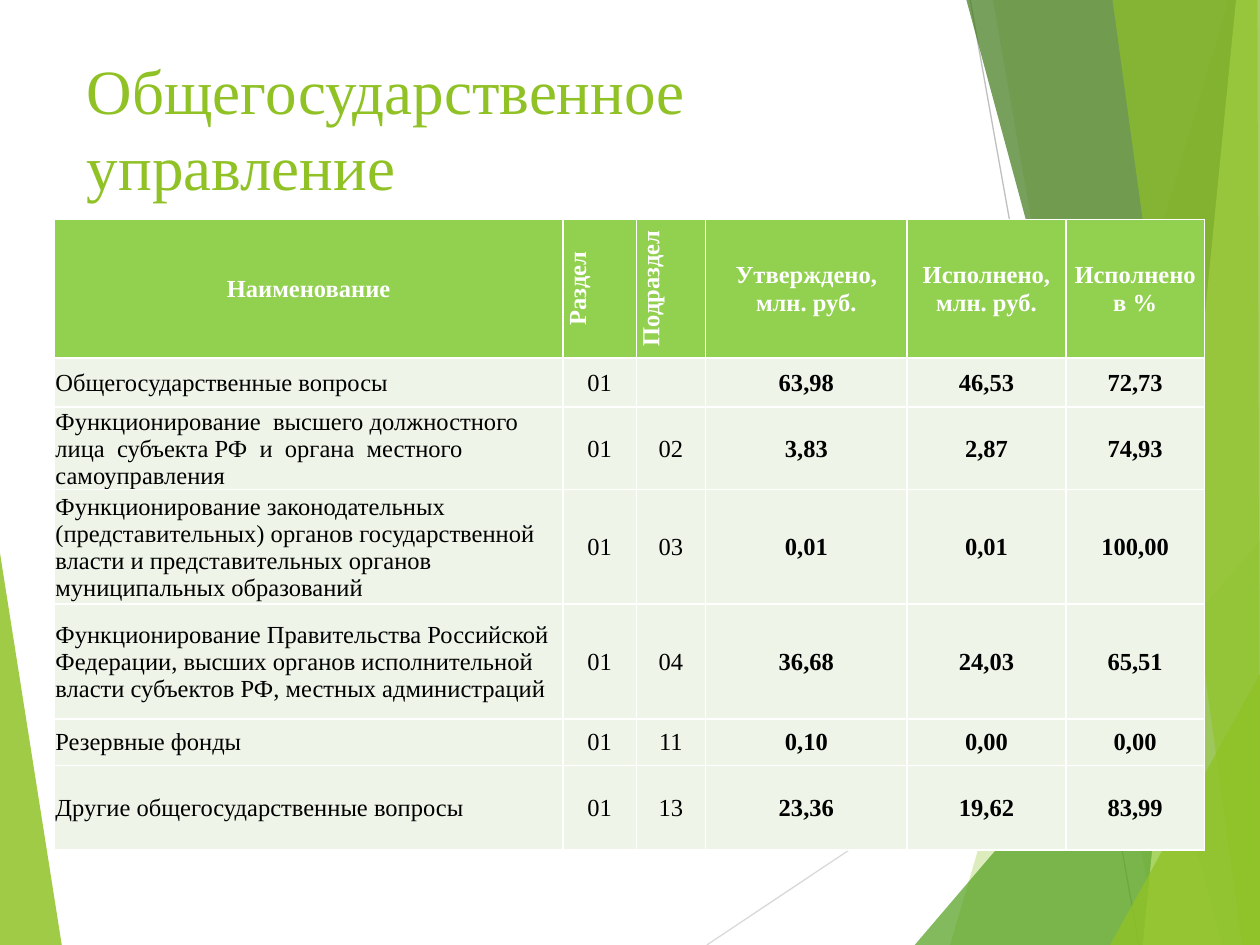
from lxml.etree import SubElement
from pptx import Presentation
from pptx.dml.color import RGBColor
from pptx.enum.shapes import MSO_CONNECTOR
from pptx.enum.text import MSO_ANCHOR, MSO_AUTO_SIZE, PP_ALIGN
from pptx.oxml.ns import qn
from pptx.util import Inches, Pt

FONT = "Times New Roman"
GREEN, HEADER_GREEN, PALE_GREEN = "90C226", "92D050", "EEF4E8"
WHITE, BLACK = "FFFFFF", "000000"

RAYS = [
    ("D9D9D9", (5.61, 7.5), (10, 4.57)),
    ("BFBFBF", (7.7, 0), (9.04, 7.5)),
]
FACETS = [
    (GREEN, 30, [(9.75, 0), (7.54, 7.5), (10, 7.5), (10, 0)]),
    (GREEN, 20, [(7.88, 0), (9.19, 7.5), (10, 7.5), (10, 0)]),
    ("54A021", 72, [(7.26, 7.5), (10, 4.29), (10, 7.5)]),
    ("3F7819", 70, [(7.67, 0), (9.7, 7.5), (10, 7.5), (10, 0)]),
    ("C0E474", 70, [(9.81, 0), (9.07, 7.5), (10, 7.5), (10, 0)]),
    (GREEN, 65, [(8.83, 0), (9.86, 7.5), (10, 7.5), (9.98, 0)]),
    (GREEN, 80, [(8.81, 7.5), (10, 5.35), (10, 7.5)]),
]
LEFT_FACET = (GREEN, 85, [(0, 4.39), (0.49, 7.5), (0, 7.5)])

COLUMN_WIDTHS = [4.04, 0.58, 0.55, 1.6, 1.26, 1.1]
ROW_HEIGHTS = [1.1, 0.39, 0.65, 0.91, 0.91, 0.37, 0.67]
HEADINGS = ["Наименование", "Раздел", "Подраздел", "Утверждено,\nмлн. руб.",
            "Исполнено,\nмлн. руб.", "Исполнено в %"]
BUDGET = [
    ("Общегосударственные вопросы", "01", "", "63,98", "46,53", "72,73"),
    ("Функционирование  высшего должностного  лица  субъекта РФ  и  органа  местного  "
     "самоуправления", "01", "02", "3,83", "2,87", "74,93"),
    ("Функционирование законодательных (представительных) органов государственной "
     "власти и представительных органов муниципальных образований",
     "01", "03", "0,01", "0,01", "100,00"),
    ("Функционирование Правительства Российской Федерации, высших органов "
     "исполнительной власти субъектов РФ, местных администраций",
     "01", "04", "36,68", "24,03", "65,51"),
    ("Резервные фонды", "01", "11", "0,10", "0,00", "0,00"),
    ("Другие общегосударственные вопросы", "01", "13", "23,36", "19,62", "83,99"),
]


def rgb(hex_color):
    return RGBColor.from_string(hex_color)


def write_text(frame, text, *, size, color, bold=False, align=PP_ALIGN.LEFT):
    frame.text = text
    for paragraph in frame.paragraphs:
        paragraph.alignment = align
        for run in paragraph.runs:
            run.font.name = FONT
            run.font.size = Pt(size)
            run.font.bold = bold
            run.font.color.rgb = rgb(color)


def add_facet(slide, color, opacity, corners):
    points = [(Inches(x), Inches(y)) for x, y in corners]
    builder = slide.shapes.build_freeform(*points[0])
    builder.add_line_segments(points[1:], close=True)
    facet = builder.convert_to_shape()
    facet.shadow.inherit = False
    facet.line.fill.background()
    facet.fill.solid()
    facet.fill.fore_color.rgb = rgb(color)
    fill_color = facet._element.spPr.find(qn("a:solidFill"))[0]
    SubElement(fill_color, qn("a:alpha"), val=str(opacity * 1000))


def add_ray(slide, color, start, end):
    ends = [Inches(value) for value in (*start, *end)]
    ray = slide.shapes.add_connector(MSO_CONNECTOR.STRAIGHT, *ends)
    ray.line.color.rgb = rgb(color)
    ray.line.width = Pt(0.75)
    SubElement(ray._element.spPr, qn("a:effectLst"))


def add_title(slide, text):
    title = slide.shapes.title
    title.left, title.top = Inches(0.59), Inches(0.29)
    title.width, title.height = Inches(6.94), Inches(1.44)
    frame = title.text_frame
    frame.word_wrap = True
    frame.auto_size = MSO_AUTO_SIZE.NONE
    frame.vertical_anchor = MSO_ANCHOR.MIDDLE
    write_text(frame, text, size=36, color=GREEN)


def format_cell(cell, fill):
    cell.margin_left = cell.margin_right = cell.margin_top = Inches(0.01)
    cell.margin_bottom = 0
    cell.vertical_anchor = MSO_ANCHOR.MIDDLE
    properties = cell._tc.get_or_add_tcPr()
    for side in ("lnL", "lnR", "lnT", "lnB"):
        border = SubElement(properties, qn(f"a:{side}"), w=str(Pt(1)))
        border_fill = SubElement(border, qn("a:solidFill"))
        SubElement(border_fill, qn("a:srgbClr"), val=WHITE)
    cell.fill.solid()
    cell.fill.fore_color.rgb = rgb(fill)


def add_budget_table(slide):
    table = slide.shapes.add_table(
        len(ROW_HEIGHTS), len(COLUMN_WIDTHS), Inches(0.43), Inches(1.74),
        Inches(sum(COLUMN_WIDTHS)), Inches(sum(ROW_HEIGHTS))).table
    for column, width in zip(table.columns, COLUMN_WIDTHS):
        column.width = Inches(width)
    for row, height in zip(table.rows, ROW_HEIGHTS):
        row.height = Inches(height)
    for r, values in enumerate([HEADINGS, *BUDGET]):
        is_header = r == 0
        for c, value in enumerate(values):
            cell = table.cell(r, c)
            format_cell(cell, HEADER_GREEN if is_header else PALE_GREEN)
            if is_header and c in (1, 2):
                cell._tc.get_or_add_tcPr().set("vert", "vert270")
            if value:
                write_text(cell.text_frame, value, size=14,
                           color=WHITE if is_header else BLACK,
                           bold=is_header or c > 2,
                           align=PP_ALIGN.CENTER if is_header or c else PP_ALIGN.LEFT)


def main():
    presentation = Presentation()
    presentation.slide_width, presentation.slide_height = Inches(10), Inches(7.5)
    slide = presentation.slides.add_slide(presentation.slide_layouts[5])
    add_facet(slide, *LEFT_FACET)
    for ray in RAYS:
        add_ray(slide, *ray)
    for facet in FACETS:
        add_facet(slide, *facet)
    add_title(slide, "Общегосударственное управление")
    add_budget_table(slide)
    presentation.save("out.pptx")


if __name__ == "__main__":
    main()
